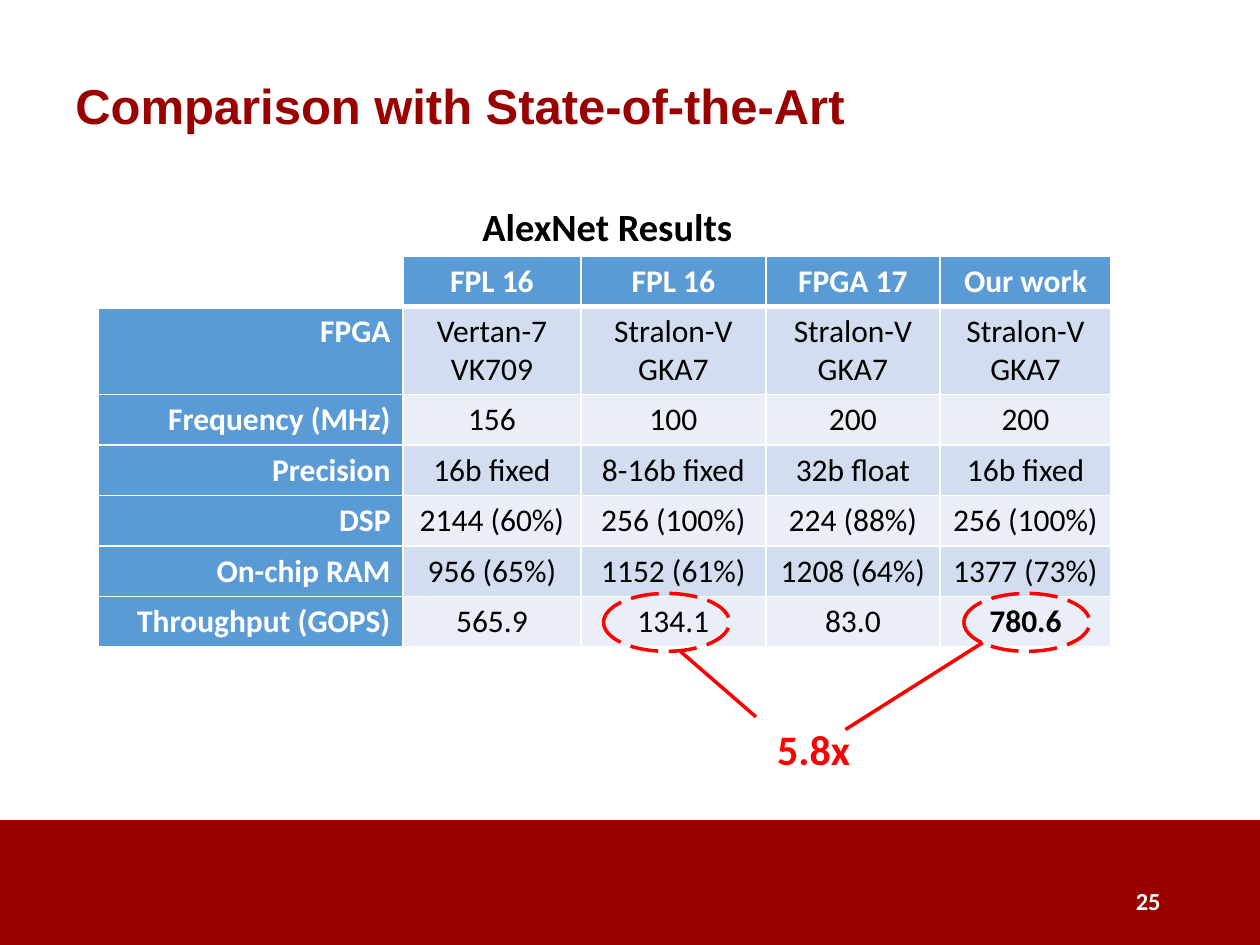
"""Build the slide comparing AlexNet throughput with the state of the art."""
import pptx
import pptx.util
import pptx.dml.color
import pptx.enum.dml
import pptx.enum.shapes
import pptx.enum.text
import pptx.oxml
import pptx.oxml.ns
from lxml import etree

Inches = pptx.util.Inches
Pt = pptx.util.Pt
ALIGN = pptx.enum.text.PP_ALIGN
MIDDLE = pptx.enum.text.MSO_ANCHOR.MIDDLE
TOP = pptx.enum.text.MSO_ANCHOR.TOP
SHAPES = pptx.enum.shapes.MSO_SHAPE
RGB = pptx.dml.color.RGBColor.from_string
COLORS = {
    "maroon": "990000", "white": "FFFFFF", "black": "000000", "red": "FF0000",
    "header": "5B9BD5", "dark band": "D2DEEF", "light band": "EAEFF7",
}


def add_run(paragraph, text, size, color, bold=True, font="Calibri"):
    run = paragraph.add_run()
    run.text = text
    run.font.size = Pt(size)
    run.font.name = font
    run.font.bold = bold
    run.font.color.rgb = RGB(COLORS[color])


def add_label(box, text, size, color, font="Calibri", align=ALIGN.LEFT, anchor=TOP):
    frame = slide.shapes.add_textbox(*map(Inches, box)).text_frame
    frame.word_wrap = True
    frame.vertical_anchor = anchor
    frame.paragraphs[0].alignment = align
    add_run(frame.paragraphs[0], text, size, color, font=font)


presentation = pptx.Presentation()
presentation.slide_width = Inches(10)
presentation.slide_height = Inches(7.5)
slide = presentation.slides.add_slide(presentation.slide_layouts[6])

footer = slide.shapes.add_shape(
    SHAPES.RECTANGLE, Inches(0), Inches(6.51), Inches(10), Inches(0.99))
footer.shadow.inherit = False
footer.fill.solid()
footer.fill.fore_color.rgb = RGB(COLORS["maroon"])
footer.line.fill.background()

add_label((0.5, 0.4, 9, 0.87), "Comparison with State-of-the-Art", 28, "maroon",
          font="Arial", anchor=MIDDLE)
add_label((7.06, 6.95, 2.25, 0.4), "25", 14, "white", align=ALIGN.RIGHT, anchor=MIDDLE)

results = [
    ["", "FPL 16", "FPL 16", "FPGA 17", "Our work"],
    ["FPGA", "Vertan-7 VK709", "Stralon-V\nGKA7", "Stralon-V\nGKA7", "Stralon-V\nGKA7"],
    ["Frequency (MHz)", "156", "100", "200", "200"],
    ["Precision", "16b fixed", "8-16b fixed", "32b float", "16b fixed"],
    ["DSP", "2144 (60%)", "256 (100%)", "224 (88%)", "256 (100%)"],
    ["On-chip RAM", "956 (65%)", "1152 (61%)", "1208 (64%)", "1377 (73%)"],
    ["Throughput (GOPS)", "565.9", "134.1", "83.0", "780.6"],
]
column_widths = [2.42, 1.41, 1.47, 1.38, 1.36]
row_heights = [0.4, 0.7] + [0.4] * 5
comparison = slide.shapes.add_table(
    len(results), len(column_widths), Inches(0.78), Inches(2.03),
    Inches(sum(column_widths)), Inches(sum(row_heights))).table
for column, width in zip(comparison.columns, column_widths):
    column.width = Inches(width)
for row, height in zip(comparison.rows, row_heights):
    row.height = Inches(height)

for r, values in enumerate(results):
    for c, value in enumerate(values):
        cell = comparison.cell(r, c)
        heading = r == 0 or c == 0
        best = (r, c) == (len(results) - 1, len(values) - 1)
        if value:
            band = "dark band" if r % 2 else "light band"
            cell.fill.solid()
            cell.fill.fore_color.rgb = RGB(COLORS["header" if heading else band])
        else:
            cell.fill.background()
        for i, line in enumerate(value.split("\n") if value else []):
            frame = cell.text_frame
            paragraph = frame.add_paragraph() if i else frame.paragraphs[0]
            paragraph.alignment = ALIGN.CENTER if c else ALIGN.RIGHT
            add_run(paragraph, line, 18, "white" if heading else "black", heading or best)
        border_widths = {"L": 1, "R": 1, "T": 3 if r == 1 else 1, "B": 3 if r == 0 else 1}
        properties = cell._tc.get_or_add_tcPr()
        for position, (side, width) in enumerate(border_widths.items()):
            properties.insert(position, pptx.oxml.parse_xml(
                f'<a:ln{side} {pptx.oxml.ns.nsdecls("a")} w="{Pt(width)}"><a:solidFill>'
                f'<a:srgbClr val="{COLORS["white"]}"/></a:solidFill></a:ln{side}>'))

add_label((3.73, 1.56, 2.53, 0.47), "AlexNet Results", 22, "black")

for left in (4.79, 7.65):
    highlight = slide.shapes.add_shape(
        SHAPES.OVAL, Inches(left), Inches(4.71), Inches(1), Inches(0.46))
    highlight.shadow.inherit = False
    highlight.fill.background()
    highlight.line.color.rgb = RGB(COLORS["red"])
    highlight.line.width = Pt(2)
    highlight.line.dash_style = pptx.enum.dml.MSO_LINE.LONG_DASH

for ends in ((5.4, 5.17, 6, 5.69), (7.8, 5.1, 6.71, 5.79)):
    pointer = slide.shapes.add_connector(
        pptx.enum.shapes.MSO_CONNECTOR.STRAIGHT, *map(Inches, ends))
    pointer.line.color.rgb = RGB(COLORS["red"])
    pointer.line.width = Pt(2)
    etree.SubElement(pointer._element.spPr, pptx.oxml.ns.qn("a:effectLst"))

add_label((6.07, 5.69, 1.73, 0.5), "5.8x", 24, "red")

presentation.save("out.pptx")
